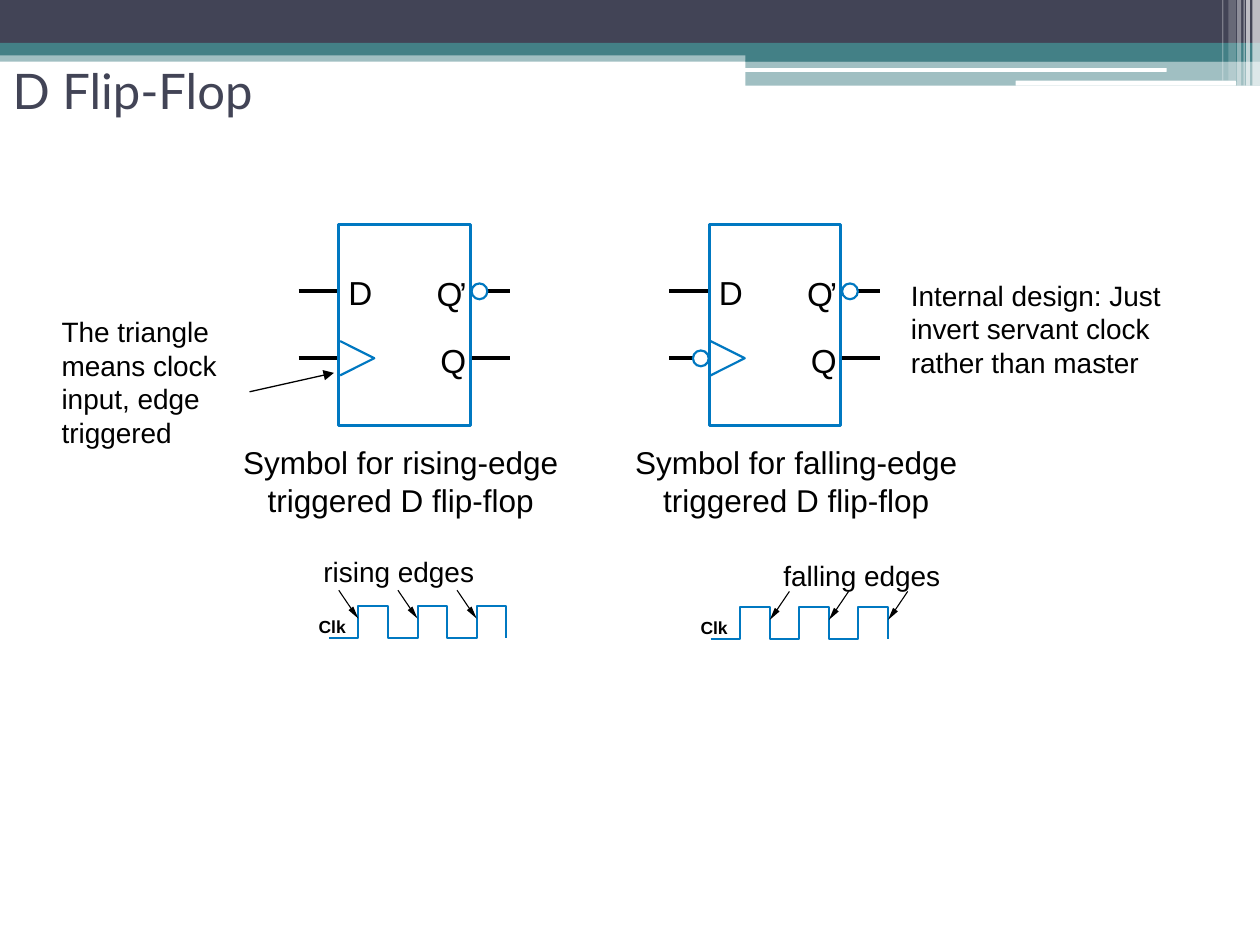
from lxml.etree import SubElement
from pptx import Presentation
from pptx.dml.color import RGBColor
from pptx.enum.shapes import MSO_CONNECTOR as Connector, MSO_SHAPE as Preset
from pptx.enum.text import MSO_ANCHOR as Anchor, MSO_AUTO_SIZE as AutoSize, PP_ALIGN as Align
from pptx.oxml.ns import qn
from pptx.util import Pt

BLACK = RGBColor(0x00, 0x00, 0x00)
WHITE = RGBColor(0xFF, 0xFF, 0xFF)
BLUE = RGBColor(0x00, 0x78, 0xC1)
SLATE = RGBColor(0x42, 0x44, 0x56)
TEAL = RGBColor(0x43, 0x80, 0x86)

HEADER_BARS = [
    (0, 28.8, 720, 6.5, TEAL, 50),
    (0, 0, 720, 24.5, SLATE, 100),
    (0, 24.5, 720, 7.2, TEAL, 100),
    (426, 28.08, 294, 7.2, TEAL, 100),
    (426, 34.56, 294, 14.4, TEAL, 50),
]
HEADER_RULES = [(425.5, 38.9, 241.2, 2.2), (580.3, 46.1, 126, 2.9)]
HEADER_STRIPES = [
    (715.7, 4.3, 49, 65),
    (712.1, 2.2, 49, 65),
    (710.6, 0.7, 49, 60),
    (707, 2.2, 49, 40),
    (702, 4.3, 46.1, 20),
    (698.4, 0.7, 46.1, 30),
]


class SlideBuilder:
    font = "Arial"
    title_font = "Lato"

    def __init__(self, presentation):
        self.slide = presentation.slides.add_slide(presentation.slide_layouts[5])
        self.shapes = self.slide.shapes

    def style(self, shape, fill=None, line=None, weight=1, opacity=100):
        shape.shadow.inherit = False
        if fill is None:
            shape.fill.background()
        else:
            shape.fill.solid()
            shape.fill.fore_color.rgb = fill
            if opacity < 100:
                color = shape.fill._xPr.find(qn("a:solidFill"))[0]
                SubElement(color, qn("a:alpha")).set("val", str(opacity * 1000))
        if line is None:
            shape.line.fill.background()
        else:
            shape.line.color.rgb = line
            shape.line.width = Pt(weight)

    def shape(self, preset, left, top, width, height, **look):
        shape = self.shapes.add_shape(preset, Pt(left), Pt(top), Pt(width), Pt(height))
        self.style(shape, **look)

    def outline(self, points, close=False, **look):
        points = [(Pt(x), Pt(y)) for x, y in points]
        builder = self.shapes.build_freeform(*points[0])
        builder.add_line_segments(points[1:], close=close)
        self.style(builder.convert_to_shape(), **look)

    def line(self, x1, y1, x2, y2, weight, arrow=False):
        connector = self.shapes.add_connector(
            Connector.STRAIGHT, Pt(x1), Pt(y1), Pt(x2), Pt(y2))
        connector.line.color.rgb = BLACK
        connector.line.width = Pt(weight)
        if arrow:
            SubElement(connector.line._ln, qn("a:tailEnd")).set("type", "triangle")
        SubElement(connector._element.spPr, qn("a:effectLst"))

    def run(self, paragraph, text, size, font, color, bold=False):
        run = paragraph.add_run()
        run.text = text
        run.font.size = Pt(size)
        run.font.name = font
        run.font.color.rgb = color
        run.font.bold = bold

    def text(self, left, top, width, height, lines, size,
             align=Align.LEFT, wrap=False, inset=True, bold=False):
        box = self.shapes.add_textbox(Pt(left), Pt(top), Pt(width), Pt(height))
        frame = box.text_frame
        frame.word_wrap = wrap
        frame.auto_size = AutoSize.SHAPE_TO_FIT_TEXT
        if not inset:
            frame.margin_left = frame.margin_right = Pt(0)
            frame.margin_top = frame.margin_bottom = Pt(0)
        for index, line in enumerate(lines):
            paragraph = frame.add_paragraph() if index else frame.paragraphs[0]
            paragraph.alignment = align
            self.run(paragraph, line, size, self.font, BLACK, bold)

    def title(self, text):
        title = self.shapes.title
        title.left, title.top, title.width, title.height = Pt(0), Pt(31.7), Pt(648), Pt(39.6)
        frame = title.text_frame
        frame.auto_size = AutoSize.NONE
        frame.vertical_anchor = Anchor.MIDDLE
        paragraph = frame.paragraphs[0]
        paragraph.alignment = Align.LEFT
        self.run(paragraph, text, 28, self.title_font, SLATE)

    def header(self):
        for left, top, width, height, color, opacity in HEADER_BARS:
            self.shape(Preset.RECTANGLE, left, top, width, height, fill=color, opacity=opacity)
        for rule in HEADER_RULES:
            self.shape(Preset.ROUNDED_RECTANGLE, *rule, fill=WHITE)
        for left, width, height, opacity in HEADER_STRIPES:
            self.shape(Preset.RECTANGLE, left, 0, width, height, fill=WHITE, opacity=opacity)

    def bubble(self, left, top):
        self.shape(Preset.OVAL, left, top, 9, 9, fill=WHITE, line=BLUE, weight=1.25)

    def flip_flop(self, left, inverted_clock):
        data_y, clock_y = 166.4, 204.7
        for label, dx, top, width in [("D", 5.4, 155.5, 13.7), ("Q", 55.8, 156.3, 13.7),
                                      ("’", 68.8, 156.3, 6.5), ("Q", 58, 194.4, 13.7)]:
            self.text(left + dx, top, width, 23, [label], 19, inset=False)
        clock_end = -9.4 if inverted_clock else 0
        for start, end, y in [(-23, 0, data_y), (-23, clock_end, clock_y),
                              (85, 97.6, data_y), (75, 97.6, clock_y)]:
            self.line(left + start, y, left + end, y, 2.38)
        self.shape(Preset.RECTANGLE, left, 128.2, 75, 115.2, line=BLUE, weight=1.75)
        self.outline([(left + 0.7, clock_y + 9.8), (left + 20.2, clock_y),
                      (left + 0.7, clock_y - 9.8)], line=BLUE, weight=1.25)
        self.bubble(left + 75.8, data_y - 4.4)
        if inverted_clock:
            self.bubble(left - 9.4, clock_y - 4.4)

    def clock_wave(self, left, high, first_edge, side):
        step, low = 16.9, high + 18
        points = [(left, low)]
        for edge in range(1, 7):
            x = left + edge * step
            points += [(x, low), (x, high)] if edge % 2 else [(x, high), (x, low)]
        self.outline(points, line=BLUE, weight=1.13)
        tip_y = high + 7.2
        for edge in range(first_edge, 7, 2):
            tip = left + edge * step
            self.line(tip + side * 11.2, tip_y - 16.2, tip + side * 3.6, tip_y - 5, 0.63)
            self.outline([(tip, tip_y), (tip + side * 2.9, tip_y - 6.9),
                          (tip + side * 5.6, tip_y - 4.8)], close=True, fill=BLACK)
        self.text(left - 5.8, high + 5.8, 15.8, 12.2, ["Clk"], 10, inset=False, bold=True)


def main():
    presentation = Presentation()
    presentation.slide_width, presentation.slide_height = Pt(720), Pt(540)
    builder = SlideBuilder(presentation)
    builder.header()
    builder.title("D Flip-Flop")

    builder.flip_flop(193.7, inverted_clock=False)
    builder.flip_flop(405.4, inverted_clock=True)
    for left, width, edge in [(131.8, 194.4, "rising"), (355.7, 198.7, "falling")]:
        builder.text(left, 249.8, width, 50.4,
                     [f"Symbol for {edge}-edge", "triggered D flip-flop"], 18, align=Align.CENTER)

    builder.clock_wave(187.9, 346.3, first_edge=1, side=-1)
    builder.text(177.8, 313.2, 100.8, 26.6, ["rising edges"], 16)
    builder.clock_wave(406.1, 347, first_edge=2, side=1)
    builder.text(440.6, 315.4, 104.4, 26.6, ["falling edges"], 16)

    builder.text(513.4, 155.5, 172.8, 64.8,
                 ["Internal design: Just invert servant clock rather than master"], 16, wrap=True)
    builder.text(28.1, 176.4, 145.4, 84.2,
                 ["The triangle means clock input, edge triggered"], 16, wrap=True)
    builder.line(142.6, 223.9, 190.8, 213.1, 0.75, arrow=True)
    presentation.save("out.pptx")


if __name__ == "__main__":
    main()
